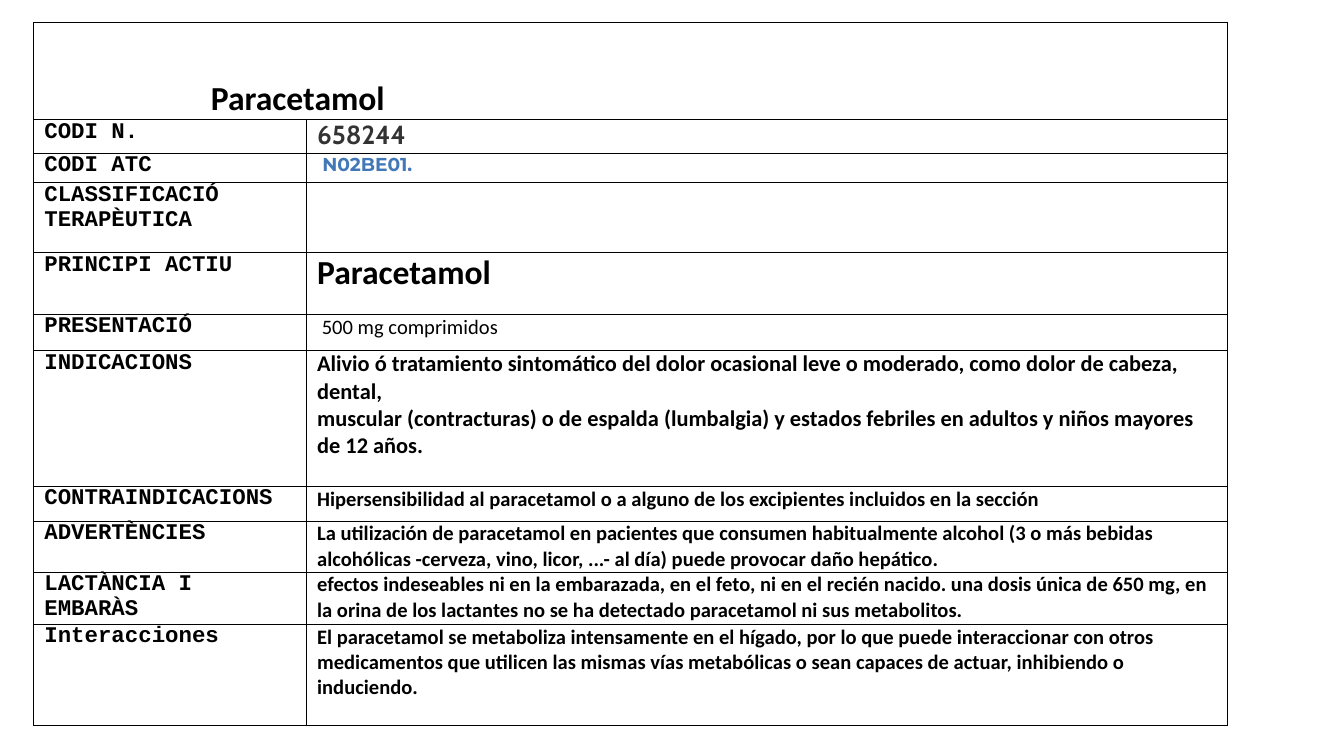
"""Build a one-slide medicine sheet for paracetamol as a bordered table."""
from lxml import etree
from pptx import Presentation
from pptx.dml.color import RGBColor
from pptx.enum.text import MSO_ANCHOR
from pptx.oxml.ns import qn
from pptx.util import Inches, Pt

TOP, BOTTOM = MSO_ANCHOR.TOP, MSO_ANCHOR.BOTTOM
COLORS = {"ink": "000000", "number": "333333", "code": "4277B8"}
BORDER_SIDES = ("a:lnL", "a:lnR", "a:lnT", "a:lnB")
LABEL = {"name": "Courier New", "size": Pt(12), "bold": True}
NAME = {"name": "Calibri", "size": Pt(18), "bold": True}
DETAIL = {"name": "Calibri", "size": Pt(11), "bold": True}
PLAIN = {**DETAIL, "bold": False}
INDICATION = {**DETAIL, "size": Pt(12)}
NUMBER = {"name": "Cabin", "size": Pt(14), "bold": True}
CODE = {"name": "Montserrat", "size": Pt(10), "bold": True}

SLIDE_WIDTH = 10
TITLE_HEIGHT = 0.72
ENTRIES = [
    (0.25, "CODI N.", ["658244"], NUMBER, "number"),
    (0.22, "CODI ATC", [" N02BE01."], CODE, "code"),
    (0.52, "CLASSIFICACIÓ TERAPÈUTICA", [], DETAIL, "ink"),
    (0.46, "PRINCIPI ACTIU", ["Paracetamol"], NAME, "ink"),
    (0.27, "PRESENTACIÓ", [" 500 mg comprimidos"], PLAIN, "ink"),
    (1.01, "INDICACIONS", [
        "Alivio ó tratamiento sintomático del dolor ocasional leve o moderado, "
        "como dolor de cabeza, dental,",
        "muscular (contracturas) o de espalda (lumbalgia) y estados febriles "
        "en adultos y niños mayores de 12 años."], INDICATION, "ink"),
    (0.26, "CONTRAINDICACIONS", [
        "Hipersensibilidad al paracetamol o a alguno de los excipientes "
        "incluidos en la sección"], DETAIL, "ink"),
    (0.37, "ADVERTÈNCIES", [
        "La utilización de paracetamol en pacientes que consumen habitualmente "
        "alcohol (3 o más bebidas alcohólicas -cerveza, vino, licor, ...- al "
        "día) puede provocar daño hepático."], DETAIL, "ink"),
    (0.39, "LACTÀNCIA I EMBARÀS", [
        "efectos indeseables ni en la embarazada, en el feto, ni en el recién "
        "nacido. una dosis única de 650 mg, en la orina de los lactantes no se "
        "ha detectado paracetamol ni sus metabolitos."], DETAIL, "ink"),
    (0.75, "Interacciones", [
        "El paracetamol se metaboliza intensamente en el hígado, por lo que "
        "puede interaccionar con otros",
        "medicamentos que utilicen las mismas vías metabólicas o sean capaces "
        "de actuar, inhibiendo o induciendo."], DETAIL, "ink"),
]


def format_cell(cell, anchor=TOP, indent=0.08):
    layout = {"margin_left": Inches(indent), "margin_right": Inches(0.07),
              "margin_top": 0, "margin_bottom": 0, "vertical_anchor": anchor}
    for attribute, value in layout.items():
        setattr(cell, attribute, value)
    properties = cell._tc.get_or_add_tcPr()
    for side in BORDER_SIDES:
        border = etree.SubElement(properties, qn(side), w=str(Pt(0.5)))
        stroke = etree.SubElement(border, qn("a:solidFill"))
        etree.SubElement(stroke, qn("a:srgbClr"), val=COLORS["ink"])
    cell.fill.background()


def write_cell(cell, lines, font_format, color="ink"):
    cell.text = "\n".join(lines)
    for paragraph in cell.text_frame.paragraphs:
        for run in paragraph.runs:
            for attribute, value in font_format.items():
                setattr(run.font, attribute, value)
            run.font.color.rgb = RGBColor.from_string(COLORS[color])


presentation = Presentation()
presentation.slide_width = Inches(SLIDE_WIDTH)
presentation.slide_height = Inches(SLIDE_WIDTH * 9 / 16)
slide = presentation.slides.add_slide(presentation.slide_layouts[6])

heights = [TITLE_HEIGHT] + [entry[0] for entry in ENTRIES]
sheet = slide.shapes.add_table(len(heights), 2, Inches(0.25), Inches(0.17),
                               Inches(8.88), Inches(sum(heights))).table
sheet.first_row = False
sheet.horz_banding = False
for column, width in zip(sheet.columns, (2.03, 6.85)):
    column.width = Inches(width)
for row, height in zip(sheet.rows, heights):
    row.height = Inches(height)

medicine = sheet.cell(0, 0)
medicine.merge(sheet.cell(0, 1))
write_cell(medicine, ["Paracetamol"], NAME)
format_cell(medicine, BOTTOM, 1.32)
format_cell(sheet.cell(0, 1))

for index, (_, label, lines, font_format, color) in enumerate(ENTRIES, start=1):
    heading, content = sheet.cell(index, 0), sheet.cell(index, 1)
    write_cell(heading, [label], LABEL)
    write_cell(content, lines, font_format, color)
    format_cell(heading)
    format_cell(content)

presentation.save("out.pptx")
